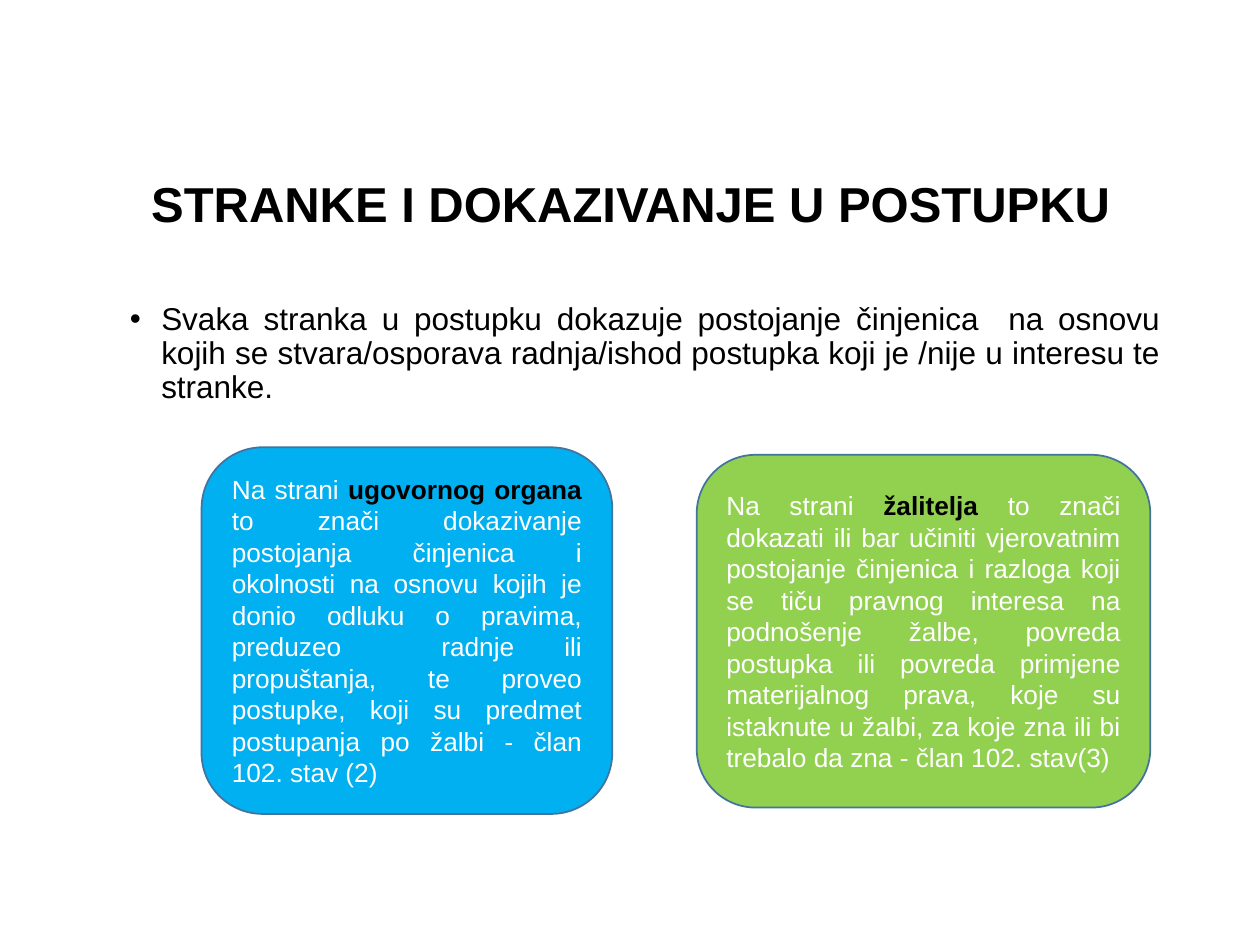
from lxml.etree import SubElement
from pptx import Presentation
from pptx.dml.color import RGBColor
from pptx.enum.shapes import MSO_SHAPE
from pptx.enum.text import MSO_ANCHOR, MSO_AUTO_SIZE, PP_ALIGN
from pptx.oxml.ns import qn
from pptx.util import Inches, Pt

# Content
TITLE = "STRANKE I DOKAZIVANJE U POSTUPKU"
RULE = ("Svaka stranka u postupku dokazuje postojanje činjenica  na osnovu kojih se "
        "stvara/osporava radnja/ishod postupka koji je /nije u interesu te stranke.")
PARTIES = [
    {"box": (1.6, 3.55, 3.26, 2.91), "fill": "authority",
     "text": [("Na strani ", False), ("ugovornog organa", True),
              (" to znači dokazivanje postojanja činjenica i okolnosti na osnovu kojih je "
               "donio odluku o pravima, preduzeo  radnje ili propuštanja, te proveo "
               "postupke, koji su predmet postupanja po žalbi - član 102. stav (2)", False)]},
    {"box": (5.53, 3.61, 3.6, 2.8), "fill": "appellant",
     "text": [("Na strani ", False), ("žalitelja", True),
              (" to znači dokazati ili bar učiniti vjerovatnim postojanje činjenica i razloga "
               "koji se tiču pravnog interesa na podnošenje žalbe, povreda postupka ili "
               "povreda primjene materijalnog prava, koje su istaknute u žalbi, za koje zna "
               "ili bi trebalo da zna - član 102. stav(3)", False)]},
]
TITLE_BOX = (1.1, 1.19, 8.21, 0.9)
RULE_BOX = (0.93, 2.36, 8.38, 4.4)

THEME = {
    "font": "Arial",
    "sizes": {"title": 28, "body": 18, "party": 15},
    "colors": {"dark": "000000", "light": "FFFFFF", "outline": "43739E",
               "authority": "00B0F0", "appellant": "92D050"},
}


def color(name):
    return RGBColor.from_string(THEME["colors"][name])


def style(font, size, tone, bold=False):
    font.name = THEME["font"]
    font.size = Pt(THEME["sizes"][size])
    font.color.rgb = color(tone)
    font.bold = bold


def fill_placeholder(shape, box, text, size, anchor, align, bold=False):
    shape.left, shape.top, shape.width, shape.height = map(Inches, box)
    frame = shape.text_frame
    frame.text = text
    frame.auto_size = MSO_AUTO_SIZE.NONE
    frame.vertical_anchor = anchor
    para = frame.paragraphs[0]
    para.alignment = align
    para.line_spacing = 0.9
    para.space_before = Pt(0)
    style(para.runs[0].font, size, "dark", bold)
    return para


def add_bullet(para, indent):
    props = para._p.get_or_add_pPr()
    props.set("marL", str(Inches(indent)))
    props.set("indent", str(-Inches(indent)))
    SubElement(props, qn("a:buFont"), typeface=THEME["font"])
    SubElement(props, qn("a:buChar"), char="•")


def add_party(page, party):
    shape = page.shapes.add_shape(MSO_SHAPE.ROUNDED_RECTANGLE, *map(Inches, party["box"]))
    shape.shadow.inherit = False
    shape.fill.solid()
    shape.fill.fore_color.rgb = color(party["fill"])
    shape.line.color.rgb = color("outline")
    shape.line.width = Pt(1)
    frame = shape.text_frame
    frame.word_wrap = True
    frame.vertical_anchor = MSO_ANCHOR.MIDDLE
    para = frame.paragraphs[0]
    para.alignment = PP_ALIGN.JUSTIFY
    for text, strong in party["text"]:
        span = para.add_run()
        span.text = text
        style(span.font, "party", "dark" if strong else "light", strong)


def main():
    deck = Presentation()
    deck.slide_width, deck.slide_height = Inches(10), Inches(7.5)
    page = deck.slides.add_slide(deck.slide_layouts[1])

    # Title and general rule
    fill_placeholder(page.shapes.title, TITLE_BOX, TITLE, "title",
                     MSO_ANCHOR.MIDDLE, PP_ALIGN.LEFT, bold=True)
    rule = fill_placeholder(page.placeholders[1], RULE_BOX, RULE, "body",
                            MSO_ANCHOR.TOP, PP_ALIGN.JUSTIFY)
    add_bullet(rule, 0.25)

    # What each party has to prove
    for party in PARTIES:
        add_party(page, party)

    deck.save("out.pptx")


if __name__ == "__main__":
    main()
